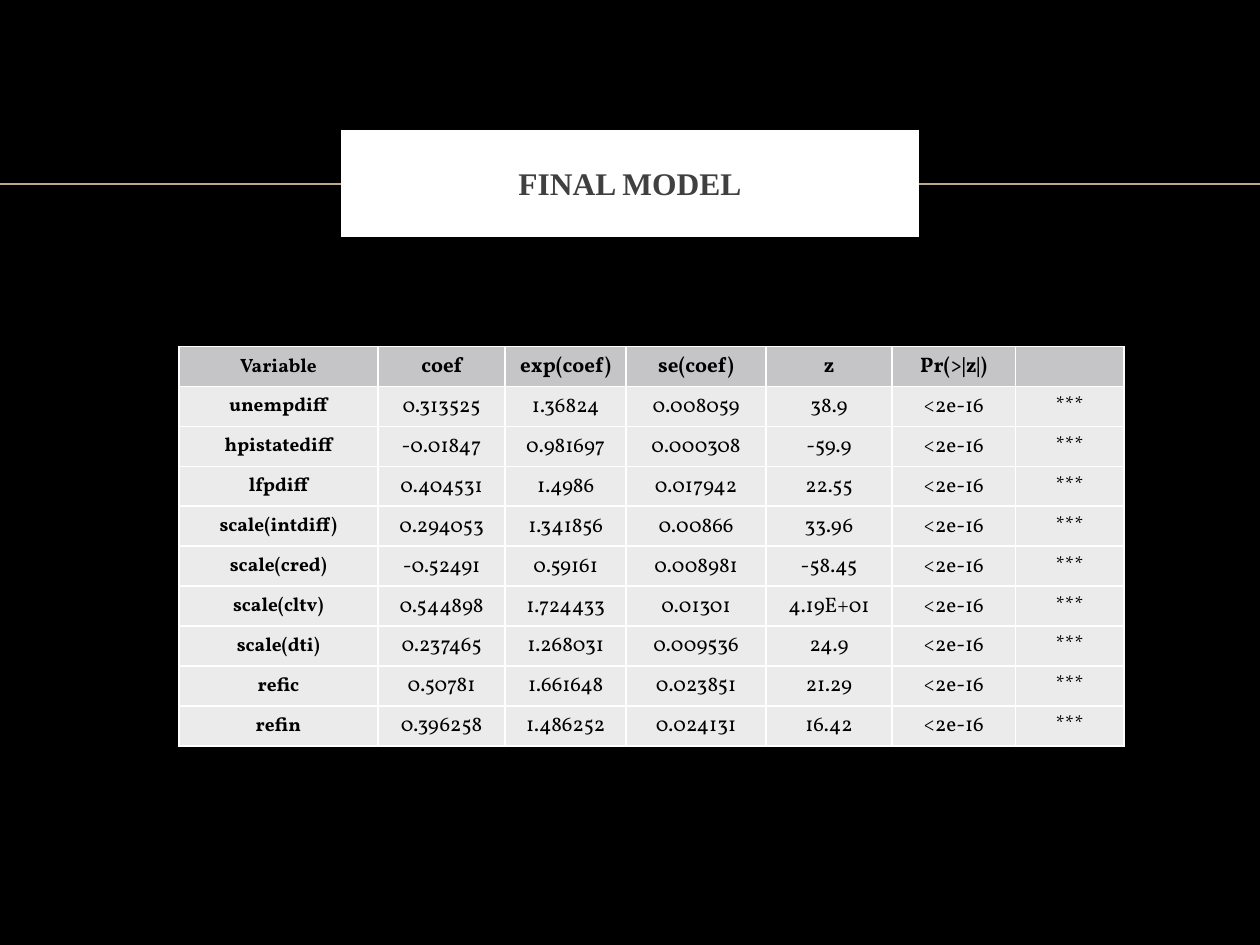
from lxml.etree import SubElement as Sub
from pptx import Presentation
from pptx.dml.color import RGBColor as RGB
from pptx.enum.shapes import MSO_CONNECTOR as CONN, MSO_SHAPE as SHAPE
from pptx.enum.text import MSO_ANCHOR as ANCHOR, PP_ALIGN as ALIGN
from pptx.oxml.ns import qn
from pptx.util import Inches, Pt


def color(target, value):
    target.solid()
    target.fore_color.rgb = RGB.from_string(value)


def write(tf, text, name, size, bold, value):
    p = tf.paragraphs[0]
    p.alignment = ALIGN.CENTER
    r = p.add_run()
    r.text = text
    for key, val in dict(name=name, size=Pt(size), bold=bold).items():
        setattr(r.font, key, val)
    color(r.font.fill, value)
    return p


prs = Presentation()
prs.slide_width, prs.slide_height = W, H = Inches(10), Inches(7.5)
s = prs.slides.add_slide(prs.slide_layouts[6])
color(s.background.fill, "000000")

rule_y = Inches(1.46)
rule = s.shapes.add_connector(CONN.STRAIGHT, 0, rule_y, W, rule_y)
color(rule.line.fill, "BBAA8A")
rule.line.width = Pt(1)
Sub(rule.element.spPr, qn("a:effectLst"))

title_w, title_h = Inches(4.5), Inches(0.77)
sp = s.shapes.add_shape(SHAPE.RECTANGLE, (W - title_w) // 2, Inches(1.07), title_w, title_h)
sp.shadow.inherit = False
color(sp.fill, "FFFFFF")
color(sp.line.fill, "FFFFFF")
sp.line.width = Pt(6)
Sub(sp.element.spPr.find(qn("a:ln")), qn("a:miter"), lim="800000")
sp.text_frame.vertical_anchor = ANCHOR.MIDDLE
p = write(sp.text_frame, "FINAL MODEL", "Times New Roman", 18, True, "404040")
p.space_before = Pt(4)

header = ["Variable", "coef", "exp(coef)", "se(coef)", "z", "Pr(>|z|)", ""]
estimates = [
    ["unempdiff", "0.313525", "1.36824", "0.008059", "38.9"],
    ["hpistatediff", "-0.01847", "0.981697", "0.000308", "-59.9"],
    ["lfpdiff", "0.404531", "1.4986", "0.017942", "22.55"],
    ["scale(intdiff)", "0.294053", "1.341856", "0.00866", "33.96"],
    ["scale(cred)", "-0.52491", "0.59161", "0.008981", "-58.45"],
    ["scale(cltv)", "0.544898", "1.724433", "0.01301", "4.19E+01"],
    ["scale(dti)", "0.237465", "1.268031", "0.009536", "24.9"],
    ["refic", "0.50781", "1.661648", "0.023851", "21.29"],
    ["refin", "0.396258", "1.486252", "0.024131", "16.42"],
]
rows = [header] + [row + ["<2e-16", "***"] for row in estimates]
widths = [1.58, 1.01, 0.96, 1.11, 1, 0.98, 0.86]
table = s.shapes.add_table(len(rows), len(widths), Inches(1.42), Inches(2.75),
                           Inches(sum(widths)), Inches(3.17)).table
for col, width in zip(table.columns, widths):
    col.width = Inches(width)

cell_format = dict(vertical_anchor=ANCHOR.MIDDLE, margin_left=Inches(0.01),
                   margin_right=Inches(0.01), margin_top=Inches(0.01), margin_bottom=0)
for i, row in enumerate(rows):
    for j, text in enumerate(row):
        cell = table.cell(i, j)
        for key, val in cell_format.items():
            setattr(cell, key, val)
        write(cell.text_frame, text, "Vollkorn", 12 if j else 11, i == 0 or j == 0, "000000")
        tcPr = cell._tc.get_or_add_tcPr()
        for side in ("lnL", "lnR", "lnT", "lnB"):
            ln = Sub(tcPr, qn(f"a:{side}"), w=str(Pt(1)))
            Sub(Sub(ln, qn("a:solidFill")), qn("a:srgbClr"), val="FFFFFF")
        color(cell.fill, "EBEBEB" if i else "C5C5C8")

prs.save("out.pptx")
